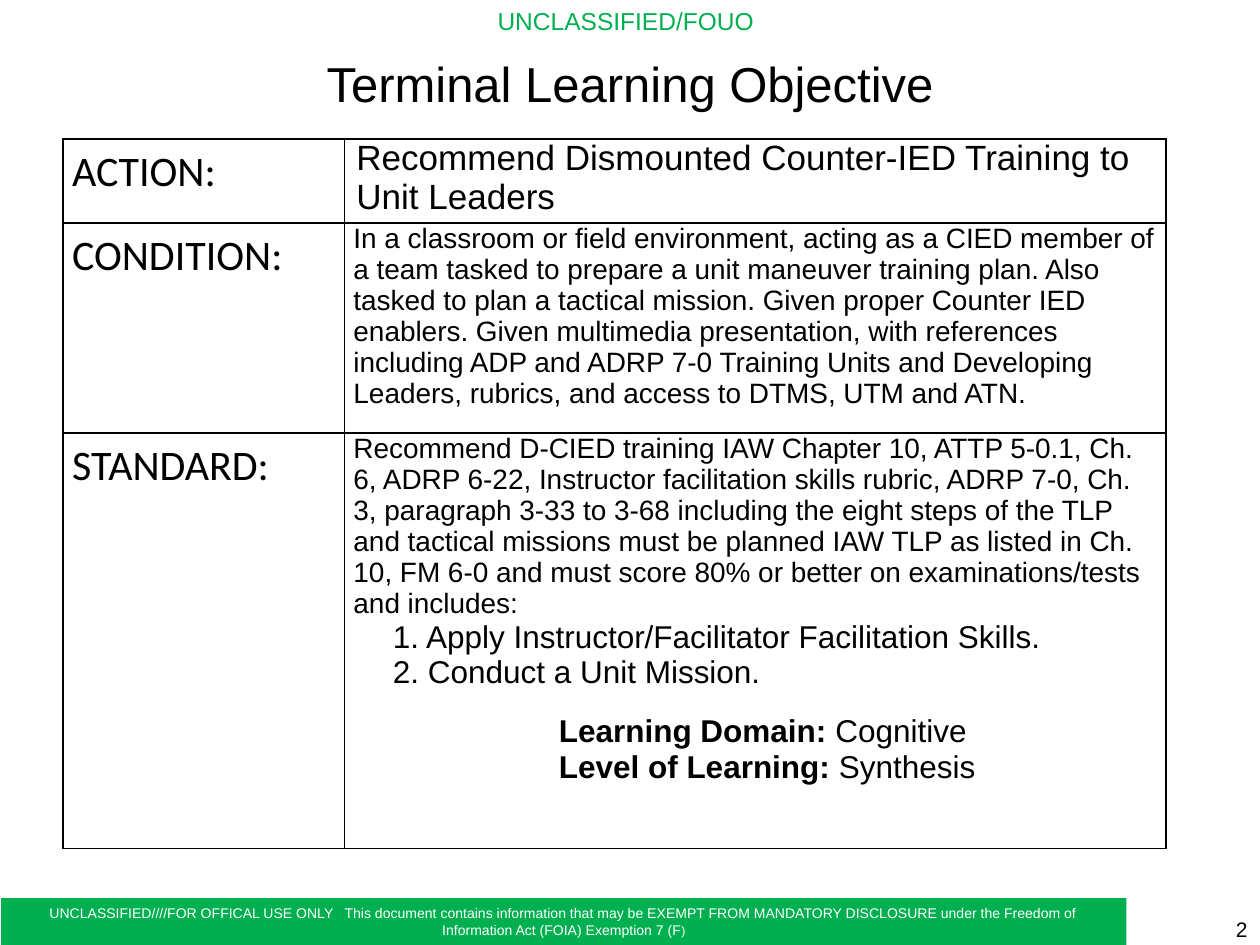
from lxml.etree import SubElement
from pptx import Presentation
from pptx.dml.color import RGBColor
from pptx.enum.shapes import MSO_SHAPE
from pptx.enum.text import MSO_ANCHOR, PP_ALIGN
from pptx.oxml.ns import qn
from pptx.util import Pt

COLORS = {"black": "000000", "green": "00B050", "white": "FFFFFF"}

ACTION = "Recommend Dismounted Counter-IED Training to Unit Leaders"
CONDITION = (
    "In a classroom or field environment, acting as a CIED member of a team tasked "
    "to prepare a unit maneuver training plan. Also tasked to plan a tactical mission. "
    "Given proper Counter IED enablers. Given multimedia presentation, with references "
    "including ADP and ADRP 7-0 Training Units and Developing Leaders, rubrics, and "
    "access to DTMS, UTM and ATN."
)
STANDARD = (
    "Recommend D-CIED training IAW Chapter 10, ATTP 5-0.1, Ch. 6, ADRP 6-22, Instructor "
    "facilitation skills rubric, ADRP 7-0, Ch. 3, paragraph 3-33 to 3-68 including the "
    "eight steps of the TLP and tactical missions must be planned IAW TLP as listed in "
    "Ch. 10, FM 6-0 and must score 80% or better on examinations/tests and includes:"
)
STEPS = ["1. Apply Instructor/Facilitator Facilitation Skills.", "2. Conduct a Unit Mission."]
LEARNING = [("Learning Domain: ", "Cognitive"), ("Level of Learning: ", "Synthesis")]
NOTICE = (
    "UNCLASSIFIED////FOR OFFICAL USE ONLY   This document contains information that may be "
    "EXEMPT FROM MANDATORY DISCLOSURE under the Freedom of Information Act (FOIA) "
    "Exemption 7 (F"
)


def color(name):
    return RGBColor.from_string(COLORS[name])


def add_run(paragraph, text, size, font="Arial", ink="black", bold=False):
    run = paragraph.add_run()
    run.text = text
    run.font.size = Pt(size)
    run.font.name = font
    run.font.bold = bold
    run.font.color.rgb = color(ink)


def add_label(slide, box, text, size, align, anchor=MSO_ANCHOR.MIDDLE, ink="black", wrap=True):
    frame = slide.shapes.add_textbox(*map(Pt, box)).text_frame
    frame.word_wrap = wrap
    frame.vertical_anchor = anchor
    frame.paragraphs[0].alignment = align
    add_run(frame.paragraphs[0], text, size, ink=ink)


def add_banner(slide):
    banner = slide.shapes.add_shape(MSO_SHAPE.RECTANGLE, Pt(0.7), Pt(513.3), Pt(643), Pt(26.7))
    banner.shadow.inherit = False
    banner.fill.solid()
    banner.fill.fore_color.rgb = color("green")
    banner.line.fill.background()
    notice = banner.text_frame.paragraphs[0]
    notice.alignment = PP_ALIGN.CENTER
    add_run(notice, NOTICE, 8, ink="white")
    add_run(notice, ")", 7, ink="white")


def set_indent(paragraph, left=0, first=0):
    properties = paragraph._p.get_or_add_pPr()
    properties.set("marL", str(Pt(left)))
    properties.set("indent", str(Pt(first)))


def format_cell(cell):
    cell.margin_left = cell.margin_right = Pt(5.2)
    cell.margin_top = cell.margin_bottom = 0
    properties = cell._tc.get_or_add_tcPr()
    for side in ("a:lnL", "a:lnR", "a:lnT", "a:lnB"):
        border = SubElement(properties, qn(side), w=str(Pt(1)))
        fill = SubElement(border, qn("a:solidFill"))
        SubElement(fill, qn("a:srgbClr"), val=COLORS["black"])
    cell.fill.background()


def add_objective_table(slide):
    widths, heights = (160.8, 469.6), (46.2, 120, 237.5)
    table = slide.shapes.add_table(
        len(heights), len(widths), Pt(36), Pt(79.4), Pt(sum(widths)), Pt(sum(heights))
    ).table
    table.first_row = table.horz_banding = False
    for column, width in zip(table.columns, widths):
        column.width = Pt(width)

    # Row headings and the opening paragraph of each description
    rows = [("ACTION:", ACTION, 20), ("CONDITION:", CONDITION, 16), ("STANDARD:", STANDARD, 16)]
    for index, (heading, description, size) in enumerate(rows):
        table.rows[index].height = Pt(heights[index])
        heading_cell, description_cell = table.cell(index, 0), table.cell(index, 1)
        format_cell(heading_cell)
        format_cell(description_cell)
        heading_line = heading_cell.text_frame.paragraphs[0]
        heading_line.line_spacing = 1.15
        add_run(heading_line, heading, 24, font="Calibri")
        add_run(description_cell.text_frame.paragraphs[0], description, size)
    set_indent(table.cell(0, 1).text_frame.paragraphs[0], left=1.7)

    # Steps and learning levels under the standard
    standard = table.cell(2, 1).text_frame
    for step in STEPS:
        step_line = standard.add_paragraph()
        set_indent(step_line, first=22.5)
        add_run(step_line, step, 18)
    for index, (name, level) in enumerate(LEARNING):
        level_line = standard.add_paragraph()
        set_indent(level_line, first=117.4)
        if index == 0:
            level_line.space_before = Pt(13.8)
        add_run(level_line, name, 18, bold=True)
        add_run(level_line, level, 18)


def main():
    presentation = Presentation()
    presentation.slide_width, presentation.slide_height = Pt(720), Pt(540)
    slide = presentation.slides.add_slide(presentation.slide_layouts[6])

    # Classification marks
    add_label(slide, (277.2, 0, 164.9, 24.5), "UNCLASSIFIED/FOUO", 14, PP_ALIGN.LEFT,
              anchor=MSO_ANCHOR.TOP, ink="green", wrap=False)
    add_banner(slide)

    # Title and page number
    add_label(slide, (36, 21.6, 648, 51.8), "Terminal Learning Objective", 28, PP_ALIGN.CENTER)
    add_label(slide, (552, 522, 168, 18), "2", 12, PP_ALIGN.RIGHT)

    # Action, condition and standard
    add_objective_table(slide)
    presentation.save("out.pptx")


if __name__ == "__main__":
    main()
